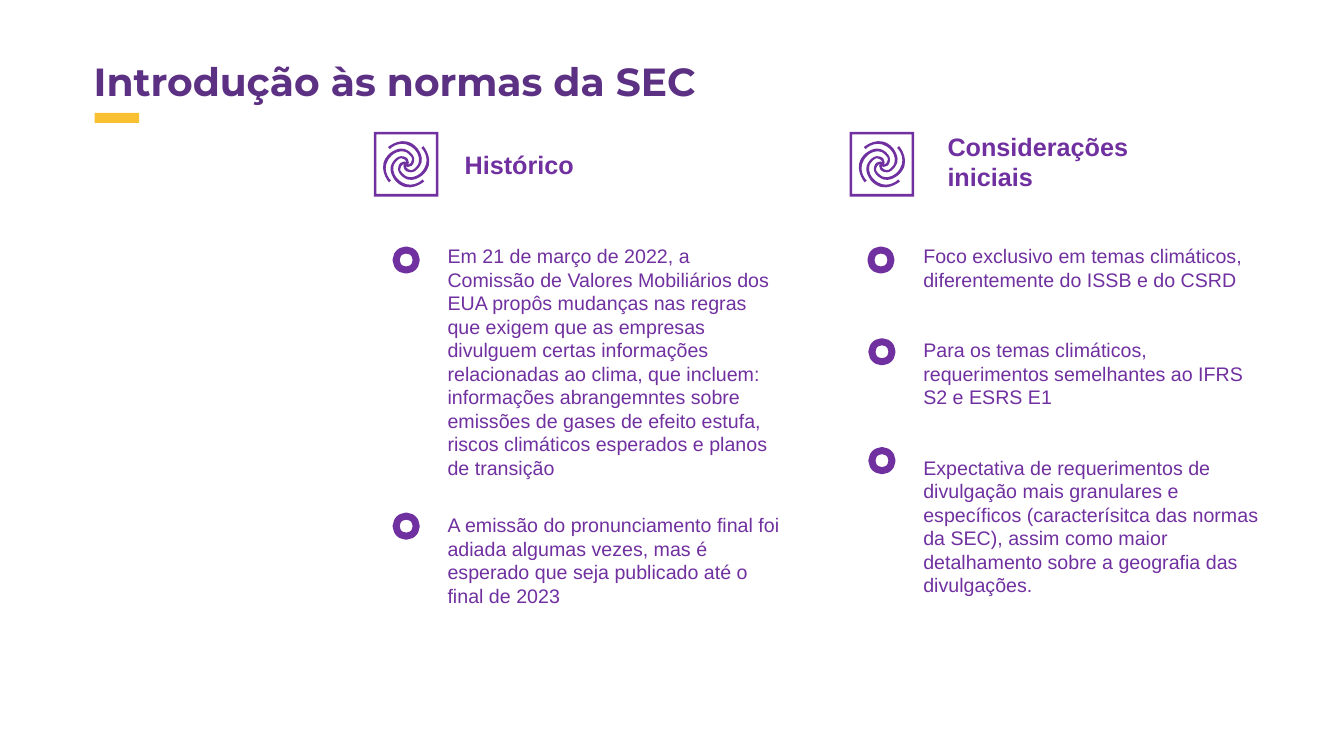
from dataclasses import dataclass

from lxml import etree
from pptx import Presentation
from pptx import util as u
from pptx.dml.color import RGBColor
from pptx.enum import shapes, text
from pptx.oxml.ns import qn

PURPLE, TITLE_PURPLE, YELLOW, WHITE = "7030A0", "5C3183", "F9C032", "FFFFFF"
BODY_TOP, BODY_HEIGHT = 2.42, 4.11
ICON_TOP, RING_SIZE = 1.31, 0.2

# Icon outline in hundredths of an inch, measured from the icon's centre
ICON_HALF, ICON_BORDER = 32, 2.5
ARM_START = (0, 2)
ARM_CURVES = [
    ((0, 2), (0, 3), (0, 3)),
    ((1, 4), (2, 6), (5, 6)),
    ((7, 6), (10, 3), (12, 0)),
    ((13, -3), (14, -8), (9, -14)),
    ((-3, -27), (-16, -16), (-16, -15)),
    ((-16, -15), (-18, -17), (-18, -17)),
    ((-18, -17), (-2, -31), (11, -16)),
    ((17, -8), (16, -2), (14, 1)),
    ((12, 5), (8, 8), (5, 8)),
    ((1, 8), (-2, 6), (-2, 4)),
    ((-3, 2), (-3, 1), (-2, 0)),
]

Point = tuple[float, float]
Box = tuple[float, float, float, float]


@dataclass
class Column:
    heading: str
    heading_box: Box
    icon_left: float
    body_left: float
    body_width: float
    gap: float  # points after each paragraph
    items: list[str]
    rings: list[Point]


COLUMNS = [
    Column(
        "Histórico", (4.51, 1.43, 1.6, 0.4), 3.71, 4.44, 3.32, 24,
        ["Em 21 de março de 2022, a Comissão de Valores Mobiliários dos EUA propôs "
         "mudanças nas regras que exigem que as empresas divulguem certas informações "
         "relacionadas ao clima, que incluem: informações abrangemntes sobre emissões "
         "de gases de efeito estufa, riscos climáticos esperados e planos de transição",
         "A emissão do pronunciamento final foi adiada algumas vezes, mas é esperado "
         "que seja publicado até o final de 2023"],
        [(3.93, 2.48), (3.93, 5.12)],
    ),
    Column(
        "Considerações iniciais", (9.3, 1.25, 2.74, 0.71), 8.43, 9.16, 3.41, 33.5,
        ["Foco exclusivo em temas climáticos, diferentemente do ISSB e do CSRD",
         "Para os temas climáticos, requerimentos semelhantes ao IFRS S2 e ESRS E1",
         "Expectativa de requerimentos de divulgação mais granulares e específicos "
         "(caracterísitca das normas da SEC), assim como maior detalhamento sobre a "
         "geografia das divulgações."],
        [(8.64, 2.48), (8.65, 3.39), (8.65, 4.47)],
    ),
]


def rgb(value: str) -> RGBColor:
    return RGBColor.from_string(value)


def fill_text(sp, box: Box, items: list[str], size: float, color: str,
              font: str = "Arial", bold: bool = False, gap: float = 0) -> None:
    """Place a placeholder and write one plain paragraph per item."""
    sp.left, sp.top, sp.width, sp.height = map(u.Inches, box)
    tf = sp.text_frame
    tf.word_wrap = True
    tf.auto_size = text.MSO_AUTO_SIZE.NONE
    tf.vertical_anchor = text.MSO_ANCHOR.TOP
    for i, item in enumerate(items):
        p = tf.add_paragraph() if i else tf.paragraphs[0]
        pPr = p._p.get_or_add_pPr()
        pPr.set("marL", "0")
        pPr.set("indent", "0")
        etree.SubElement(pPr, qn("a:buNone"))
        p.alignment = text.PP_ALIGN.LEFT
        p.space_before = u.Pt(0)
        p.space_after = u.Pt(gap)
        r = p.add_run()
        r.text = item
        r.font.name, r.font.size, r.font.bold = font, u.Pt(size), bold
        r.font.color.rgb = rgb(color)


def paint(sp, fill: str) -> None:
    sp.shadow.inherit = False
    sp.fill.solid()
    sp.fill.fore_color.rgb = rgb(fill)
    sp.line.fill.background()


def add_preset(s, kind, box: Box, fill: str, line: str = "", width: float = 0) -> None:
    sp = s.shapes.add_shape(kind, *map(u.Inches, box))
    paint(sp, fill)
    if line:
        sp.line.color.rgb = rgb(line)
        sp.line.width = u.Pt(width)


def square(half: float) -> list[Point]:
    return [(-half, -half), (-half, half), (half, half), (half, -half)]


def swirl() -> list[Point]:
    """Control points of four arms, each a quarter turn from the last."""
    arm = [point for curve in ARM_CURVES for point in curve]
    points = [ARM_START]
    for _ in range(4):
        points += arm
        arm = [(-y, x) for x, y in arm]
    return points


def bend(sp, count: int) -> None:
    """Turn the last count line segments into cubic curves, three by three."""
    lines = list(sp._element.iter(qn("a:lnTo")))[-count:]
    for i in range(0, count, 3):
        curve = etree.Element(qn("a:cubicBezTo"))
        lines[i].addprevious(curve)
        for line in lines[i:i + 3]:
            curve.append(line[0])
            line.getparent().remove(line)


def add_icon(s, left: float, top: float) -> None:
    units = 100  # drawing units per hundredth of an inch
    arms = swirl()
    builder = None
    for outline in (square(ICON_HALF), square(ICON_HALF - ICON_BORDER), arms):
        pts = [((x + ICON_HALF) * units, (y + ICON_HALF) * units) for x, y in outline]
        if builder is None:
            builder = s.shapes.build_freeform(*pts[0], scale=u.Inches(1) / (100 * units))
        else:
            builder.move_to(*pts[0])
        builder.add_line_segments(pts[1:], close=True)
    sp = builder.convert_to_shape(u.Inches(left), u.Inches(top))
    bend(sp, len(arms) - 1)
    paint(sp, PURPLE)


def main() -> None:
    prs = Presentation()
    prs.slide_width, prs.slide_height = u.Inches(40 / 3), u.Inches(7.5)
    s = prs.slides.add_slide(prs.slide_layouts.get_by_name("Comparison"))

    # Title and accent bar
    fill_text(s.shapes.title, (0.83, 0.52, 9.51, 0.98), ["Introdução às normas da SEC"],
              28, TITLE_PURPLE, "Montserrat", True)
    add_preset(s, shapes.MSO_SHAPE.RECTANGLE, (0.94, 1.12, 0.44, 0.1), YELLOW)

    # Columns: heading, list, icon and ring markers
    for i, col in enumerate(COLUMNS):
        heading, body = s.placeholders[2 * i + 1], s.placeholders[2 * i + 2]
        fill_text(heading, col.heading_box, [col.heading], 18, PURPLE, bold=True)
        fill_text(body, (col.body_left, BODY_TOP, col.body_width, BODY_HEIGHT),
                  col.items, 14, PURPLE, gap=col.gap)
        tf = body.text_frame
        tf.margin_left = tf.margin_top = tf.margin_right = tf.margin_bottom = 0
        add_icon(s, col.icon_left, ICON_TOP)
        for x, y in col.rings:
            add_preset(s, shapes.MSO_SHAPE.OVAL, (x, y, RING_SIZE, RING_SIZE),
                       WHITE, PURPLE, 5)

    prs.save("out.pptx")


if __name__ == "__main__":
    main()
